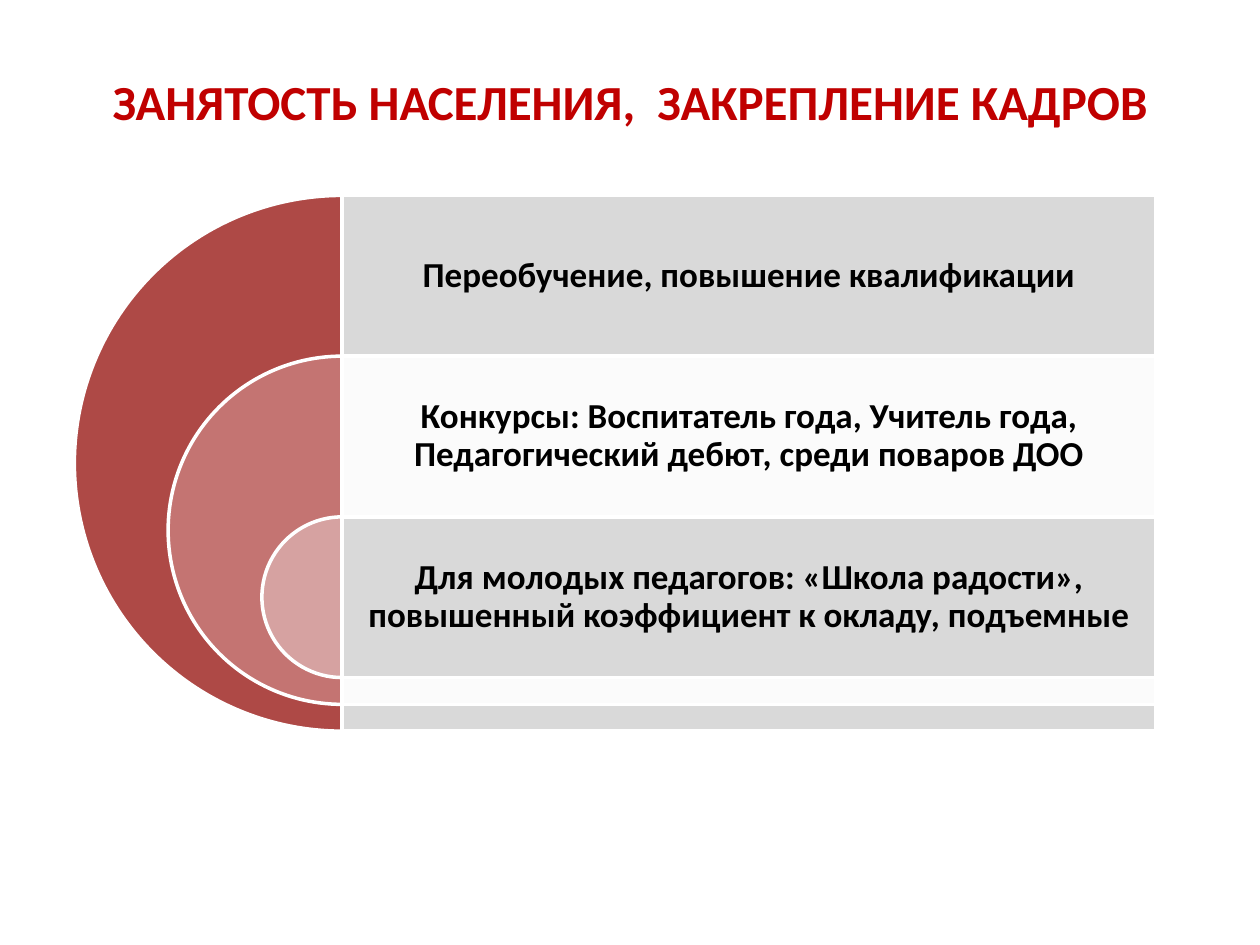
"""Build the slide on employment and staff retention with nested half-circles."""
import pptx
import pptx.dml.color
import pptx.enum.shapes
import pptx.enum.text
import pptx.oxml
import pptx.oxml.ns
import pptx.util
from pptx.util import Cm

HEADING = "ЗАНЯТОСТЬ НАСЕЛЕНИЯ,  ЗАКРЕПЛЕНИЕ КАДРОВ"
MEASURES = [
    ("Переобучение, повышение квалификации", "AE4946", "D9D9D9", None),
    ("Конкурсы: Воспитатель года, Учитель года, Педагогический дебют, среди поваров ДОО",
     "C47472", "FFFFFF", 90),
    ("Для молодых педагогов: «Школа радости», повышенный коэффициент к окладу, подъемные",
     "D6A2A1", "D9D9D9", None),
]
THEME = {
    "font": "Calibri", "heading_size": 28, "measure_size": 20,
    "heading": "C00000", "text": "000000", "outline": "FFFFFF",
    "outline_width": 2, "edge_width": 2.25,
}
SLIDE_WIDTH, SLIDE_HEIGHT = 25.4, 19.05
AXIS, TOP, DIAMETER, BAND_WIDTH = 6.9, 3.94, 10.8, 16.4
ROW_SHARE, SHRINK = 0.3, 0.35
ROW_HEIGHT = DIAMETER * ROW_SHARE
EDGES = [
    (AXIS + BAND_WIDTH, TOP, 6.32),
    (AXIS, TOP, 6.32),
    (AXIS + BAND_WIDTH, 14.15, 14.76),
    (AXIS, 14.07, 14.68),
]


def rgb(value):
    return pptx.dml.color.RGBColor.from_string(value)


def write(holder, text, *, size, color, anchor, inset=None, spacing=None):
    frame = holder.text_frame
    frame.word_wrap = True
    frame.auto_size = pptx.enum.text.MSO_AUTO_SIZE.NONE
    frame.vertical_anchor = anchor
    if inset is not None:
        frame.margin_left = frame.margin_right = Cm(inset)
        frame.margin_top = frame.margin_bottom = Cm(inset)
    paragraph = frame.paragraphs[0]
    paragraph.alignment = pptx.enum.text.PP_ALIGN.CENTER
    paragraph.line_spacing = spacing
    run = paragraph.add_run()
    run.text = text
    run.font.name = THEME["font"]
    run.font.size = pptx.util.Pt(size)
    run.font.bold = True
    run.font.color.rgb = rgb(color)


def outline(line, width):
    line.color.rgb = rgb(THEME["outline"])
    line.width = pptx.util.Pt(width)


def add_filled(slide, preset, box, fill, opacity=None):
    shape = slide.shapes.add_shape(preset, *map(Cm, box))
    shape.shadow.inherit = False
    shape.fill.solid()
    shape.fill.fore_color.rgb = rgb(fill)
    if opacity is not None:
        color = shape.fill._xPr.find(".//" + pptx.oxml.ns.qn("a:srgbClr"))
        alpha = pptx.oxml.parse_xml(
            f'<a:alpha {pptx.oxml.ns.nsdecls("a")} val="{opacity * 1000}"/>')
        color.append(alpha)
    outline(shape.line, THEME["outline_width"])
    return shape


def add_measure(slide, level, text, arc_color, band_color, opacity):
    diameter = DIAMETER * (1 - SHRINK * level)
    top = TOP + ROW_HEIGHT * level
    presets = pptx.enum.shapes.MSO_SHAPE
    arc = add_filled(slide, presets.PIE,
                     (AXIS - diameter / 2, top, diameter, diameter), arc_color)
    arc.adjustments[0], arc.adjustments[1] = 54, 162
    add_filled(slide, presets.RECTANGLE, (AXIS, top, BAND_WIDTH, diameter),
               band_color, opacity)
    label = slide.shapes.add_textbox(*map(Cm, (AXIS, top, BAND_WIDTH, ROW_HEIGHT)))
    write(label, text, size=THEME["measure_size"], color=THEME["text"],
          anchor=pptx.enum.text.MSO_ANCHOR.MIDDLE, inset=0.2, spacing=0.9)


def add_edge(slide, x, start, end):
    edge = slide.shapes.add_connector(
        pptx.enum.shapes.MSO_CONNECTOR.STRAIGHT, Cm(x), Cm(start), Cm(x), Cm(end))
    outline(edge.line, THEME["edge_width"])
    edge._element.spPr.append(pptx.oxml.parse_xml(
        f'<a:effectLst {pptx.oxml.ns.nsdecls("a")}/>'))


def main():
    deck = pptx.Presentation()
    deck.slide_width, deck.slide_height = Cm(SLIDE_WIDTH), Cm(SLIDE_HEIGHT)
    slide = deck.slides.add_slide(deck.slide_layouts.get_by_name("Title Only"))
    heading = slide.shapes.title
    heading.left, heading.top = Cm(0), Cm(1.32)
    heading.width, heading.height = Cm(SLIDE_WIDTH), Cm(1.45)
    write(heading, HEADING, size=THEME["heading_size"], color=THEME["heading"],
          anchor=pptx.enum.text.MSO_ANCHOR.TOP)
    for level, measure in enumerate(MEASURES):
        add_measure(slide, level, *measure)
    for edge in EDGES:
        add_edge(slide, *edge)
    deck.save("out.pptx")


if __name__ == "__main__":
    main()
